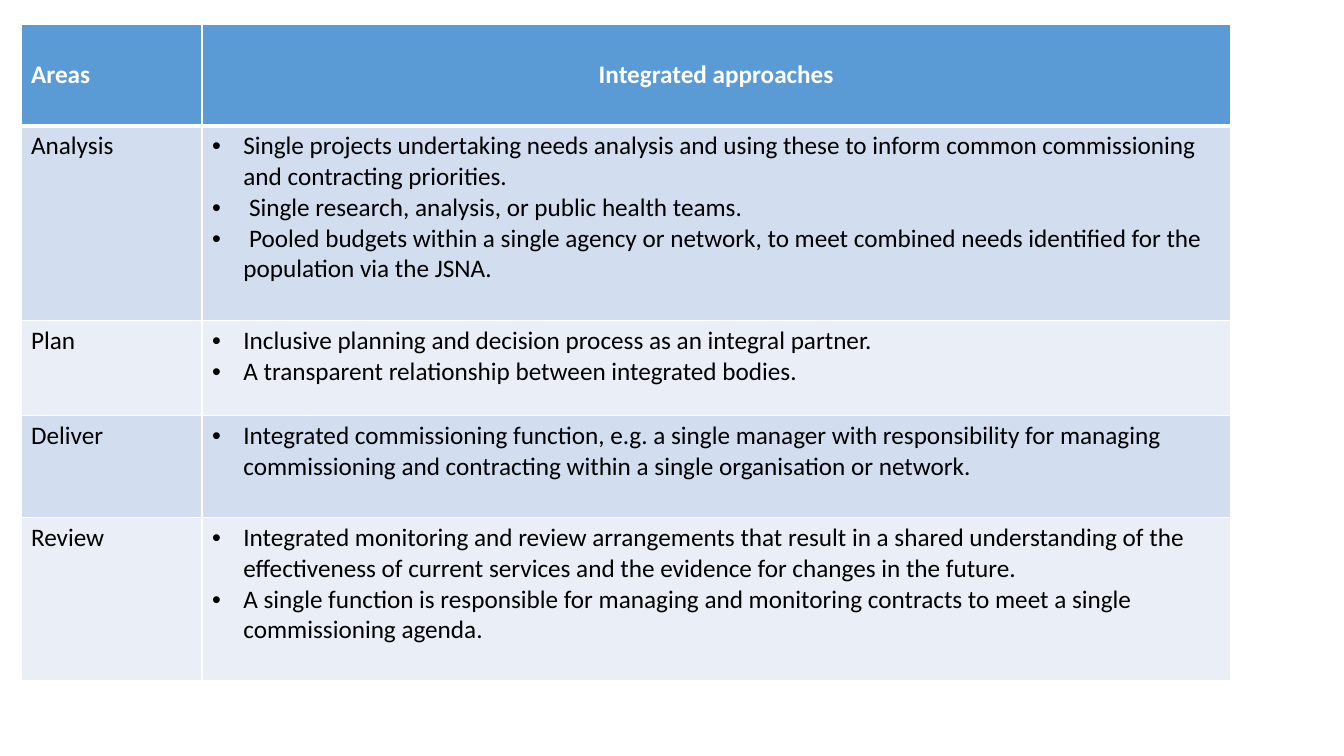
"""Build a slide with a table of integrated commissioning approaches."""
from lxml import etree
from pptx import Presentation
from pptx.dml.color import RGBColor
from pptx.enum.text import MSO_ANCHOR, PP_ALIGN
from pptx.oxml.ns import qn
from pptx.util import Cm, Pt

LEFT, CENTER = PP_ALIGN.LEFT, PP_ALIGN.CENTER
TOP, MIDDLE = MSO_ANCHOR.TOP, MSO_ANCHOR.MIDDLE
WHITE = RGBColor(0xFF, 0xFF, 0xFF)
BLACK = RGBColor(0, 0, 0)
BLUE = RGBColor(0x5B, 0x9B, 0xD5)
BANDS = RGBColor(0xD2, 0xDE, 0xEF), RGBColor(0xEA, 0xEF, 0xF7)

HEADS = ("Areas", LEFT), ("Integrated approaches", CENTER)
AREAS = {
    "Analysis": [
        "Single projects undertaking needs analysis and using these to inform "
        "common commissioning and contracting priorities.",
        " Single research, analysis, or public health teams.",
        " Pooled budgets within a single agency or network, to meet combined "
        "needs identified for the population via the JSNA.",
    ],
    "Plan": [
        "Inclusive planning and decision process as an integral partner.",
        "A transparent relationship between integrated bodies.",
    ],
    "Deliver": [
        "Integrated commissioning function, e.g. a single manager with "
        "responsibility for managing commissioning and contracting within a "
        "single organisation or network.",
    ],
    "Review": [
        "Integrated monitoring and review arrangements that result in a shared "
        "understanding of the effectiveness of current services and the "
        "evidence for changes in the future.",
        "A single function is responsible for managing and monitoring contracts "
        "to meet a single commissioning agenda.",
    ],
}
WIDTHS = 4.56, 25.92
HEIGHTS = 2.55, 4.91, 2.39, 2.57, 4.12


def write(frame, lines, *, color=BLACK, bold=False, align=LEFT, bullet=False):
    for i, line in enumerate(lines):
        para = frame.paragraphs[0] if i == 0 else frame.add_paragraph()
        para.alignment = align
        run = para.add_run()
        run.text = line
        font = run.font
        font.name, font.size, font.bold = "Calibri", Pt(18), bold
        font.color.rgb = color
        if bullet:
            props = para._p.get_or_add_pPr()
            props.set("marL", str(Cm(0.79)))
            props.set("indent", str(-Cm(0.79)))
            etree.SubElement(props, qn("a:buFont"), typeface="Arial")
            etree.SubElement(props, qn("a:buChar"), char="•")


class Deck:
    def __init__(self):
        self.show = Presentation()
        self.show.slide_width, self.show.slide_height = Cm(33.87), Cm(19.05)
        self.slide = self.show.slides.add_slide(self.show.slide_layouts[6])

    def grid(self, left, top, widths, heights):
        table = self.slide.shapes.add_table(
            len(heights), len(widths), Cm(left), Cm(top),
            Cm(sum(widths)), Cm(sum(heights))).table
        for col, width in zip(table.columns, widths):
            col.width = Cm(width)
        for row, height in zip(table.rows, heights):
            row.height = Cm(height)
        return table

    def cell(self, cell, lines, fill, *, anchor=TOP, above=1, below=1, **style):
        cell.fill.solid()
        cell.fill.fore_color.rgb = fill
        cell.vertical_anchor = anchor
        write(cell.text_frame, lines, **style)
        self.edge(cell, L=1, R=1, T=above, B=below)

    def edge(self, cell, **sides):
        props = cell._tc.get_or_add_tcPr()
        for i, (side, width) in enumerate(sides.items()):
            line = etree.Element(qn(f"a:ln{side}"), w=str(Pt(width)))
            fill = etree.SubElement(line, qn("a:solidFill"))
            etree.SubElement(fill, qn("a:srgbClr"), val=str(WHITE))
            props.insert(i, line)


def main():
    deck = Deck()
    table = deck.grid(0.53, 0.62, WIDTHS, HEIGHTS)
    for col, (head, align) in enumerate(HEADS):
        deck.cell(table.cell(0, col), [head], BLUE, anchor=MIDDLE, below=3,
                  color=WHITE, bold=True, align=align)
    for row, (area, points) in enumerate(AREAS.items(), 1):
        fill = BANDS[(row - 1) % 2]
        above = 3 if row == 1 else 1
        deck.cell(table.cell(row, 0), [area], fill, above=above)
        deck.cell(table.cell(row, 1), points, fill, above=above, bullet=True)
    deck.show.save("out.pptx")


if __name__ == "__main__":
    main()
